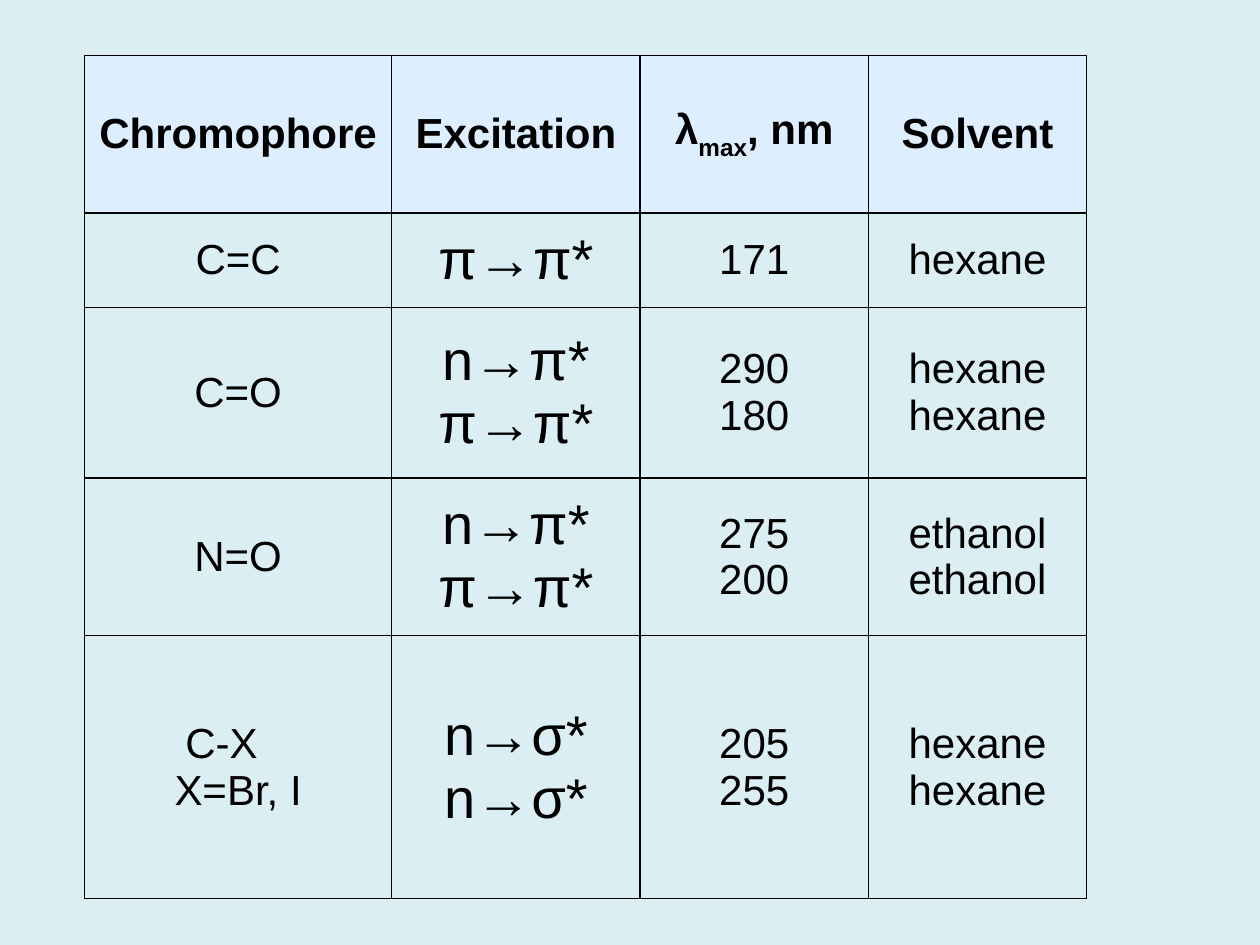
from lxml import etree
from pptx import Presentation
from pptx.dml.color import RGBColor
from pptx.enum.text import MSO_ANCHOR, PP_ALIGN
from pptx.oxml.ns import qn
from pptx.util import Pt

MID = MSO_ANCHOR.MIDDLE
CENTER = PP_ALIGN.CENTER

HEAD = ["Chromophore", "Excitation", "λmax, nm", "Solvent"]
BODY = [
    ["C=C", "π→π*", "171", "hexane"],
    ["C=O", "n→π*\vπ→π*", "290\v180", "hexane\vhexane"],
    ["N=O", "n→π*\vπ→π*", "275\v200", "ethanol\vethanol"],
    ["C-X\nX=Br, I", "n→σ*\vn→σ*", "205\v255", "hexane\vhexane"],
]
ROWS = [HEAD] + BODY
SPLITS = {
    (0, 2): [("λ", {}), ("max", {"base": -30}), (", nm", {})],
    (1, 1): [("π", {}), ("→", {"face": "Times New Roman"}), ("π*", {})],
}
WIDTHS = [175.68, 141.84, 130.6, 124.56]
HEIGHTS = [90, 54, 97.5, 90, 150.5]
LEFT, TOP = 48.24, 31.68
SHIFT = 19
INK, PAPER, BAND = "000000", "DBEEF4", "DDEEFF"


def color(code):
    return RGBColor.from_string(code)


def border(cell):
    props = cell._tc.get_or_add_tcPr()
    for spot, side in enumerate(("lnL", "lnR", "lnT", "lnB")):
        line = etree.Element(qn("a:" + side), w=str(Pt(0.75)))
        fill = etree.SubElement(line, qn("a:solidFill"))
        etree.SubElement(fill, qn("a:srgbClr"), val=INK)
        props.insert(spot, line)


def write(cell, text, parts, size, bold):
    frame = cell.text_frame
    frame.text = text
    if parts:
        para = frame.paragraphs[0]
        para.clear()
        for word, look in parts:
            run = para.add_run()
            run.text = word
            if "face" in look:
                run.font.name = look["face"]
            if "base" in look:
                run.font._element.set("baseline", str(look["base"] * 1000))
    for para in frame.paragraphs:
        para.alignment = CENTER
        font = para.font
        font.name, font.size, font.bold = "Arial", Pt(size), bold
        font.color.rgb = color(INK)


deck = Presentation()
deck.slide_width, deck.slide_height = Pt(720), Pt(540)
slide = deck.slides.add_slide(deck.slide_layouts[6])
slide.background.fill.solid()
slide.background.fill.fore_color.rgb = color(PAPER)

table = slide.shapes.add_table(
    len(ROWS), len(HEAD), Pt(LEFT), Pt(TOP), Pt(sum(WIDTHS)), Pt(sum(HEIGHTS))
).table
table.first_row = table.horz_banding = False
for col, width in zip(table.columns, WIDTHS):
    col.width = Pt(width)
for row, height in zip(table.rows, HEIGHTS):
    row.height = Pt(height)

for r, texts in enumerate(ROWS):
    for c, text in enumerate(texts):
        cell = table.cell(r, c)
        cell.vertical_anchor = MID
        if r == 0:
            cell.fill.solid()
            cell.fill.fore_color.rgb = color(BAND)
        else:
            cell.fill.background()
        border(cell)
        size = 32 if r and c == 1 else 24
        write(cell, text, SPLITS.get((r, c)), size, r == 0)

halide = table.cell(4, 0)
halide.margin_right = Pt(7.2 + SHIFT)
last = halide.text_frame.paragraphs[1]
last._p.get_or_add_pPr().set("marL", str(Pt(SHIFT)))

deck.save("out.pptx")
